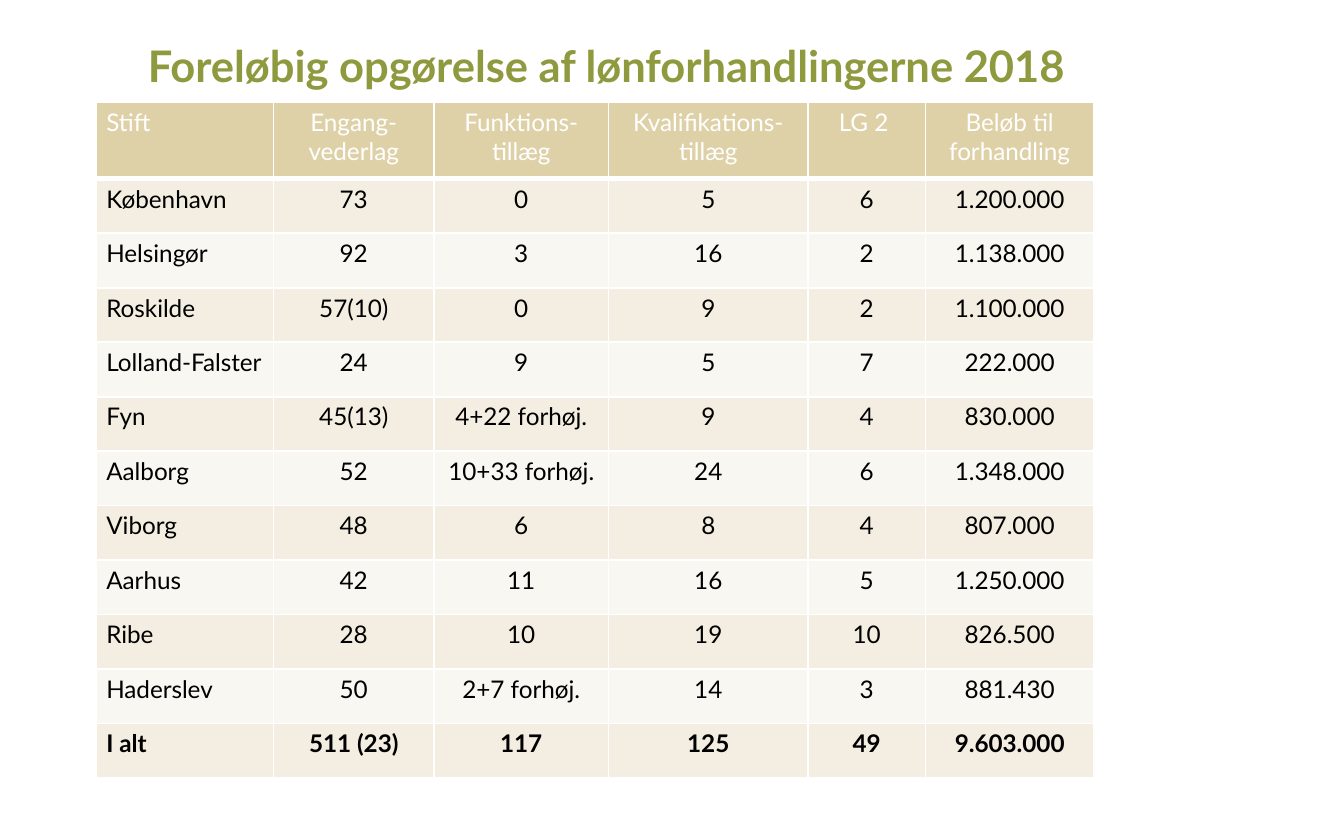
from dataclasses import dataclass

from lxml.etree import SubElement
from pptx import Presentation
from pptx.dml.color import RGBColor
from pptx.enum.text import MSO_ANCHOR, MSO_AUTO_SIZE, PP_ALIGN
from pptx.oxml.ns import qn
from pptx.util import Cm, Pt


@dataclass(frozen=True)
class Theme:
    font: str = "Lato"
    title_size: float = 23.3
    table_size: float = 13
    title: str = "8F993E"
    text: str = "000000"
    white: str = "FFFFFF"
    header: str = "DFD1A7"
    bands: tuple = ("F3EEE1", "F9F7F1")


THEME = Theme()

TITLE = "Foreløbig opgørelse af lønforhandlingerne 2018"
COLUMN_WIDTHS = (3.36, 3.03, 3.3, 3.77, 2.22, 3.18)
HEADER_HEIGHT = 1.44
ROW_HEIGHT = 1.03
ROWS = [
    ("Stift", "Engang-vederlag", "Funktions-tillæg", "Kvalifikations-tillæg", "LG 2 ", "Beløb til forhandling"),
    ("København", "73", "0", "5", "6", "1.200.000"),
    ("Helsingør", "92", "3", "16", "2", "1.138.000"),
    ("Roskilde", "57(10)", "0", "9", "2", "1.100.000"),
    ("Lolland-Falster", "24", "9", "5", "7", "222.000"),
    ("Fyn", "45(13)", "4+22 forhøj.", "9", "4", "830.000"),
    ("Aalborg", "52", "10+33 forhøj.", "24", "6", "1.348.000"),
    ("Viborg", "48", "6", "8", "4", "807.000"),
    ("Aarhus", "42", "11", "16", "5", "1.250.000"),
    ("Ribe", "28", "10", "19", "10", "826.500"),
    ("Haderslev", "50", "2+7 forhøj.", "14", "3", "881.430"),
    ("I alt", "511 (23)", "117", "125", "49", "9.603.000"),
]


def write_text(text_frame, text, size, color, bold=False, alignment=PP_ALIGN.LEFT):
    text_frame.text = text
    paragraph = text_frame.paragraphs[0]
    paragraph.alignment = alignment
    font = paragraph.runs[0].font
    font.name = THEME.font
    font.size = Pt(size)
    font.bold = bold
    font.color.rgb = RGBColor.from_string(color)


def add_title(slide):
    title = slide.shapes.title
    title.left, title.top, title.width, title.height = Cm(2.54), Cm(0.61), Cm(19.69), Cm(1.83)
    text_frame = title.text_frame
    text_frame.word_wrap = True
    text_frame.auto_size = MSO_AUTO_SIZE.NONE
    text_frame.vertical_anchor = MSO_ANCHOR.TOP
    write_text(text_frame, TITLE, THEME.title_size, THEME.title, bold=True)


def set_borders(cell, bottom_width):
    properties = cell._tc.get_or_add_tcPr()
    for side, width in (("L", 1), ("R", 1), ("T", 1), ("B", bottom_width)):
        line = SubElement(properties, qn(f"a:ln{side}"), w=str(Pt(width)))
        fill = SubElement(line, qn("a:solidFill"))
        SubElement(fill, qn("a:srgbClr"), val=THEME.white)


def format_cell(cell, text, row, column):
    is_header = row == 0
    cell.margin_left = cell.margin_right = Cm(0.2)
    cell.margin_top = cell.margin_bottom = Cm(0.1)
    cell.vertical_anchor = MSO_ANCHOR.TOP
    set_borders(cell, bottom_width=3 if is_header else 1)
    cell.fill.solid()
    fill_color = THEME.header if is_header else THEME.bands[(row - 1) % 2]
    cell.fill.fore_color.rgb = RGBColor.from_string(fill_color)
    write_text(
        cell.text_frame, text, THEME.table_size,
        THEME.white if is_header else THEME.text,
        bold=row == len(ROWS) - 1,
        alignment=PP_ALIGN.CENTER if column else PP_ALIGN.LEFT,
    )


def add_negotiation_table(slide):
    heights = [HEADER_HEIGHT] + [ROW_HEIGHT] * (len(ROWS) - 1)
    table = slide.shapes.add_table(
        len(ROWS), len(COLUMN_WIDTHS), Cm(1.81), Cm(1.94),
        Cm(sum(COLUMN_WIDTHS)), Cm(sum(heights)),
    ).table
    for column, width in zip(table.columns, COLUMN_WIDTHS):
        column.width = Cm(width)
    for row, height in zip(table.rows, heights):
        row.height = Cm(height)
    for row_index, values in enumerate(ROWS):
        for column_index, text in enumerate(values):
            format_cell(table.cell(row_index, column_index), text, row_index, column_index)


def main():
    presentation = Presentation()
    presentation.slide_width, presentation.slide_height = Cm(25.4), Cm(15.88)
    # Title-only layout
    slide = presentation.slides.add_slide(presentation.slide_layouts[5])
    # Heading
    add_title(slide)
    # Results per diocese, with the total in the last row
    add_negotiation_table(slide)
    presentation.save("out.pptx")


if __name__ == "__main__":
    main()
